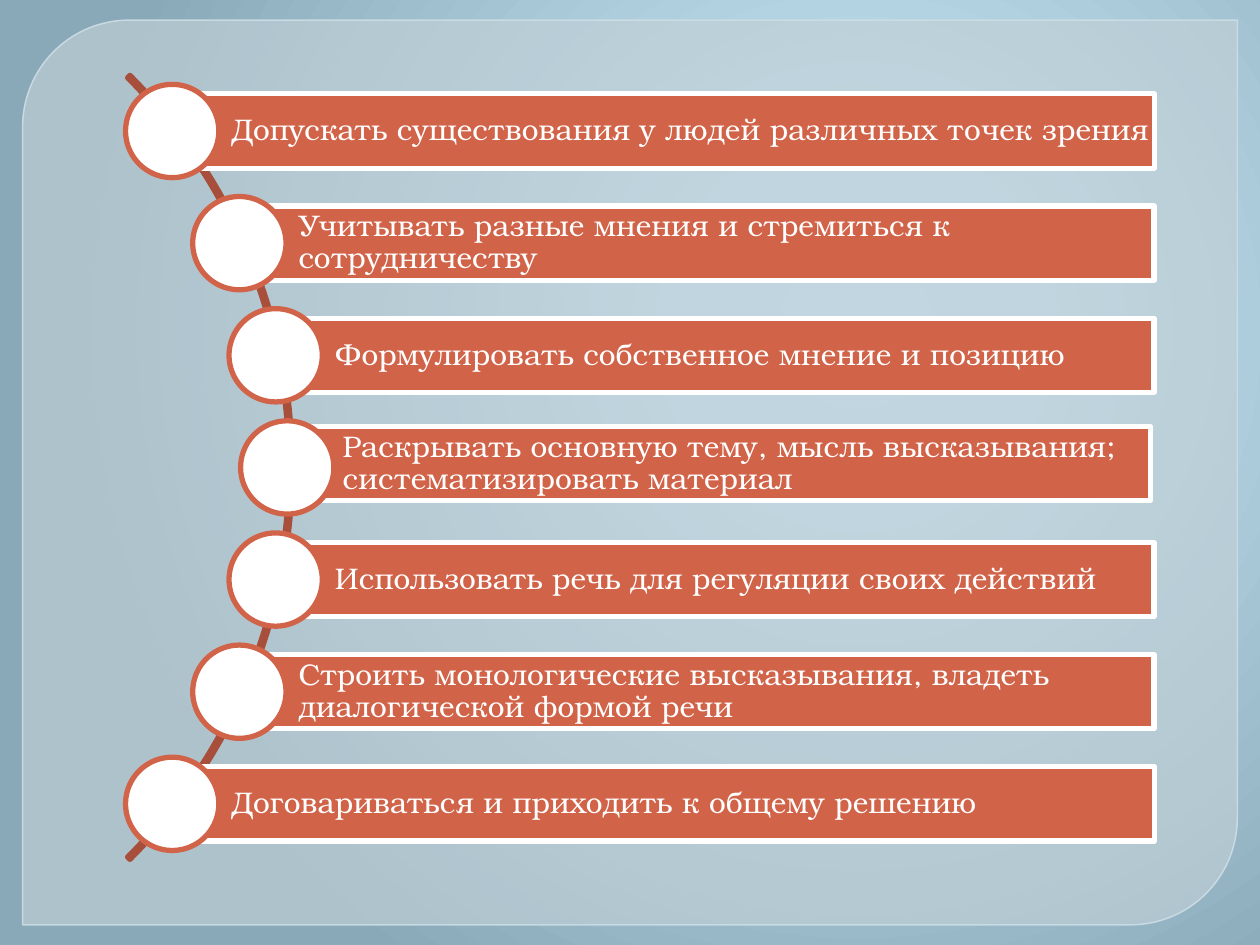
from math import sqrt

from pptx import Presentation
from pptx.dml.color import RGBColor
from pptx.enum import shapes, text
from pptx.oxml import parse_xml
from pptx.oxml.ns import nsdecls, qn
from pptx.util import Inches, Pt

FONT = "TeX Gyre Bonum"
ACCENT, WHITE, ARC = "D16349", "FFFFFF", "A74F3A"
SKILLS = [
    "Допускать существования у людей различных точек зрения",
    "Учитывать разные мнения и стремиться к сотрудничеству",
    "Формулировать собственное мнение и позицию",
    "Раскрывать основную тему, мысль высказывания; систематизировать материал",
    "Использовать речь для регуляции своих действий",
    "Строить монологические высказывания, владеть диалогической формой речи",
    "Договариваться и приходить к общему решению",
]
ARC_X, ARC_Y, ARC_RADIUS = -2.08, 3.71, 4.4
NODE_RADIUS, NODE_ORBIT = 0.37, 4.36
ROW_STEP, BAR_HEIGHT, BAR_RIGHT = 0.89, 0.59, 9.16


def color(value):
    return RGBColor.from_string(value)


def set_alpha(parent, percent):
    """Make the solid colour directly inside a fill or line semi-transparent."""
    rgb = parent.find(qn("a:solidFill")).find(qn("a:srgbClr"))
    rgb.append(parse_xml(f'<a:alpha {nsdecls("a")} val="{percent * 1000}"/>'))


def set_background(page):
    stops = [(0, "C3E4F5"), (20, "C1E1F1"), (100, "8AA9B8")]
    gradient = "".join(
        f'<a:gs pos="{place * 1000}"><a:srgbClr val="{value}"/></a:gs>'
        for place, value in stops)
    page.element.cSld.insert(0, parse_xml(
        f'<p:bg {nsdecls("p", "a")}><p:bgPr><a:gradFill rotWithShape="1">'
        f'<a:gsLst>{gradient}</a:gsLst><a:path path="circle">'
        '<a:fillToRect l="68000" t="35000" r="32000" b="65000"/></a:path>'
        '</a:gradFill><a:effectLst/></p:bgPr></p:bg>'))


def add_shape(page, kind, left, top, width, height, fill, line, weight=3):
    shape = page.shapes.add_shape(
        kind, Inches(left), Inches(top), Inches(width), Inches(height))
    shape.shadow.inherit = False
    shape.fill.solid()
    shape.fill.fore_color.rgb = color(fill)
    shape.line.color.rgb = color(line)
    shape.line.width = Pt(weight)
    return shape


def write_text(shape, words, size=17, font=FONT, ink=WHITE, indent=0.47):
    frame = shape.text_frame
    frame.word_wrap = True
    frame.vertical_anchor = text.MSO_ANCHOR.MIDDLE
    frame.margin_left, frame.margin_right = Inches(indent), Inches(0.04)
    frame.margin_top = frame.margin_bottom = Inches(0.05)
    para = frame.paragraphs[0]
    para.alignment = text.PP_ALIGN.LEFT
    para.line_spacing = 0.9
    span = para.add_run()
    span.text = words
    span.font.size = Pt(size)
    span.font.name = font
    span.font.color.rgb = color(ink)


def add_panel(page):
    panel = add_shape(page, shapes.MSO_SHAPE.ROUND_2_DIAG_RECTANGLE,
                      0.18, 0.16, 9.64, 7.18, "C2D0D7", "CEDEE6", 0.87)
    panel.adjustments[0], panel.adjustments[1] = 0.118, 0
    properties = panel.element.spPr
    set_alpha(properties, 65)
    set_alpha(properties.find(qn("a:ln")), 88)


def add_arc(page):
    arc = add_shape(page, shapes.MSO_SHAPE.BLOCK_ARC,
                    ARC_X - ARC_RADIUS, ARC_Y - ARC_RADIUS,
                    2 * ARC_RADIUS, 2 * ARC_RADIUS, ARC, ARC)
    for index, value in enumerate((189, 27, 0.003)):
        arc.adjustments[index] = value


def add_skill(page, row, words):
    """Draw a bar and its node, centred on the arc at this row."""
    middle = len(SKILLS) // 2
    offset = (row - middle) * ROW_STEP
    x = ARC_X + sqrt(NODE_ORBIT ** 2 - offset ** 2)
    y = ARC_Y + offset
    nudge = 0.03 if row == middle else 0  # the middle bar sits slightly up and left
    bar = add_shape(page, shapes.MSO_SHAPE.RECTANGLE,
                    x - nudge, y - BAR_HEIGHT / 2 - nudge,
                    BAR_RIGHT - x, BAR_HEIGHT, ACCENT, WHITE)
    write_text(bar, words)
    add_shape(page, shapes.MSO_SHAPE.OVAL, x - NODE_RADIUS, y - NODE_RADIUS,
              2 * NODE_RADIUS, 2 * NODE_RADIUS, WHITE, ACCENT)


def main():
    deck = Presentation()
    deck.slide_width, deck.slide_height = Inches(10), Inches(7.5)
    page = deck.slides.add_slide(deck.slide_layouts[6])
    set_background(page)
    add_panel(page)
    add_arc(page)
    for row, words in enumerate(SKILLS):
        add_skill(page, row, words)
    deck.save("out.pptx")


if __name__ == "__main__":
    main()
